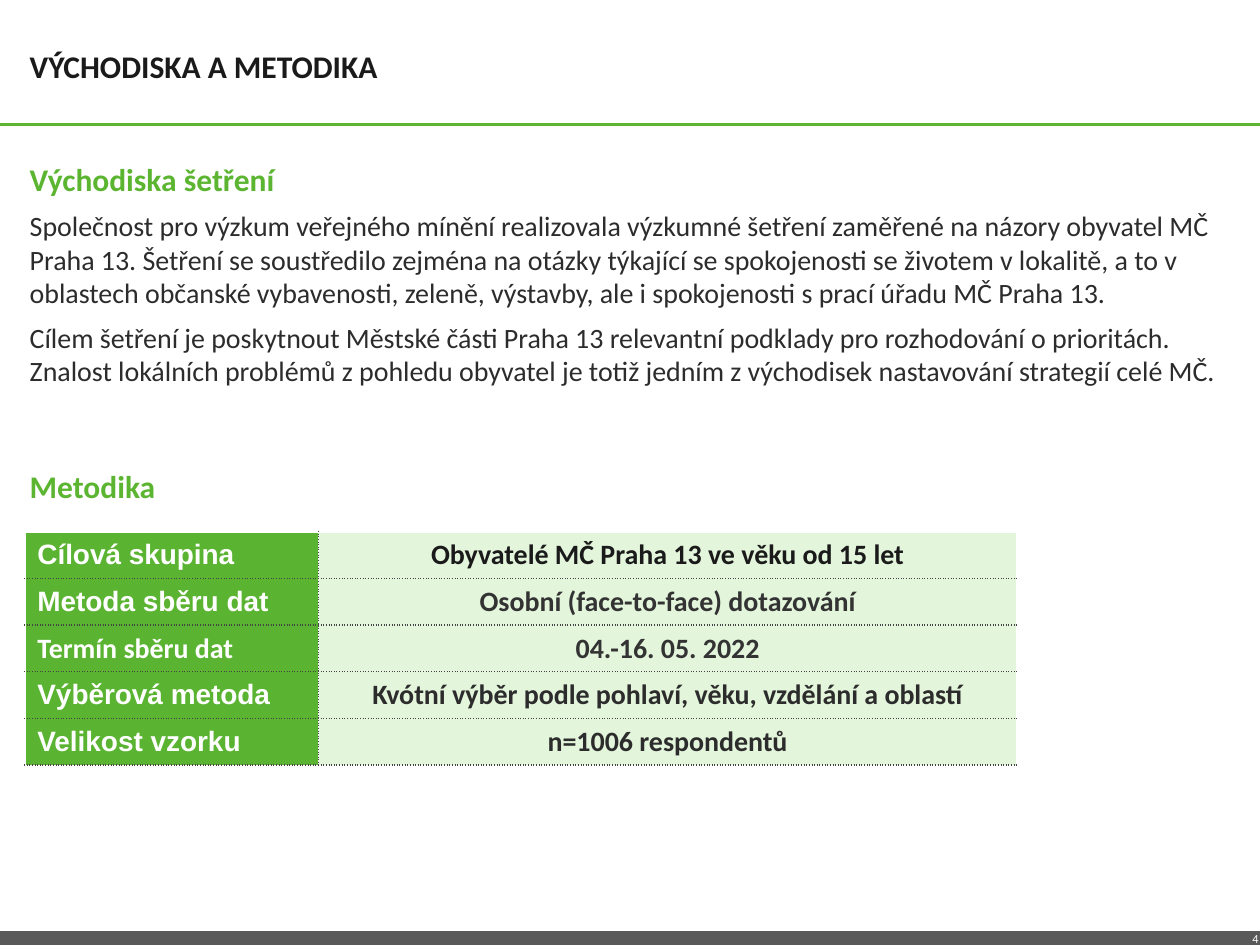
from pptx import Presentation
from pptx.dml.color import RGBColor
from pptx.enum.shapes import MSO_CONNECTOR
from pptx.enum.text import MSO_ANCHOR as Anchor, PP_ALIGN as Align
from pptx.oxml import parse_xml
from pptx.oxml.ns import nsdecls
from pptx.util import Cm, Pt

colour = RGBColor.from_string
GREEN, DARK, WHITE = "5BB531", "2C2C2C", "FFFFFF"


def write(frame, lines, size, ink, bold=False, font="Calibri", align=Align.LEFT):
    frame.text = "\n".join(lines)
    for number, para in enumerate(frame.paragraphs):
        para.alignment = align
        if number:
            para.space_before = Pt(6)
        for span in para.runs:
            span.font.name = font
            span.font.size = Pt(size)
            span.font.bold = bold
            span.font.color.rgb = colour(ink)


def add_text(left, top, width, height, side, edge, anchor=Anchor.TOP):
    box = page.shapes.add_textbox(Cm(left), Cm(top), Cm(width), Cm(height))
    frame = box.text_frame
    frame.word_wrap = True
    frame.vertical_anchor = anchor
    frame.margin_left = frame.margin_right = Cm(side)
    frame.margin_top = frame.margin_bottom = Cm(edge)
    return frame


deck = Presentation()
deck.slide_width, deck.slide_height = Cm(25.4), Cm(19.05)
page = deck.slides.add_slide(deck.slide_layouts[6])

for y, ink, weight in [(2.51, GREEN, 2), (18.92, "595959", 9)]:
    rule = page.shapes.add_connector(MSO_CONNECTOR.STRAIGHT, 0, Cm(y), Cm(25.4), Cm(y))
    rule.line.color.rgb = colour(ink)
    rule.line.width = Pt(weight)
    rule._element.spPr.append(parse_xml(f"<a:effectLst {nsdecls('a')}/>"))

page_number = add_text(24.51, 18.77, 0.86, 0.2, 0, 0)
write(page_number, ["4"], 7, WHITE, align=Align.RIGHT)

title = add_text(0.5, 0.33, 21, 2, 0.1, 0, Anchor.MIDDLE)
write(title, ["VÝCHODISKA A METODIKA"], 18, "1A1A1A", bold=True)

for top, heading in [(3.12, "Východiska šetření"), (9.32, "Metodika")]:
    write(add_text(0.5, top, 15.8, 1.19, 0.1, 0.1), [heading], 18, GREEN, bold=True)

body = add_text(0.5, 4.11, 24.41, 4.8, 0.1, 0.1)
write(body, [
    "Společnost pro výzkum veřejného mínění realizovala výzkumné šetření zaměřené na názory "
    "obyvatel MČ Praha 13. Šetření se soustředilo zejména na otázky týkající se spokojenosti "
    "se životem v lokalitě, a to v oblastech občanské vybavenosti, zeleně, výstavby, ale i "
    "spokojenosti s prací úřadu MČ Praha 13.",
    "Cílem šetření je poskytnout Městské části Praha 13 relevantní podklady pro rozhodování "
    "o prioritách. Znalost lokálních problémů z pohledu obyvatel je totiž jedním z východisek "
    "nastavování strategií celé MČ.",
], 16, DARK)

methods = [
    ("Cílová skupina", "Arial", "Obyvatelé MČ Praha 13 ve věku od 15 let", "1A1A1A"),
    ("Metoda sběru dat", "Arial", "Osobní (face-to-face) dotazování", "333333"),
    ("Termín sběru dat", "Calibri", "04.-16. 05. 2022", "333333"),
    ("Výběrová metoda", "Arial", "Kvótní výběr podle pohlaví, věku, vzdělání a oblastí", DARK),
    ("Velikost vzorku", "Arial", "n=1006 respondentů", DARK),
]
table = page.shapes.add_table(len(methods), 2, Cm(0.5), Cm(10.72), Cm(20), Cm(4.7)).table
table.first_row = table.horz_banding = False
table.columns[0].width, table.columns[1].width = Cm(5.92), Cm(14.08)

for row, (label, label_font, value, value_ink) in enumerate(methods):
    table.rows[row].height = Cm(0.94)
    label_cell, value_cell = table.cell(row, 0), table.cell(row, 1)
    write(label_cell.text_frame, [label], 16, WHITE, True, label_font)
    write(value_cell.text_frame, [value], 16, value_ink, True, align=Align.CENTER)
    for column, (cell, fill) in enumerate([(label_cell, "5AB432"), (value_cell, "DDF3D3")]):
        cell.vertical_anchor = Anchor.MIDDLE
        properties = cell._tc.get_or_add_tcPr()
        dotted = {"L": column == 1, "R": column == 0, "T": row > 0, "B": True}
        for side, is_dotted in dotted.items():
            ink, dash = ("434343", "sysDot") if is_dotted else (WHITE, "solid")
            properties.append(parse_xml(
                f'<a:ln{side} {nsdecls("a")} w="12700"><a:solidFill><a:srgbClr val="{ink}"/>'
                f'</a:solidFill><a:prstDash val="{dash}"/></a:ln{side}>'))
        cell.fill.solid()
        cell.fill.fore_color.rgb = colour(fill)
    tint = value_cell._tc.tcPr.find("{*}solidFill")[0]
    tint.append(parse_xml(f'<a:alpha {nsdecls("a")} val="80000"/>'))

deck.save("out.pptx")
